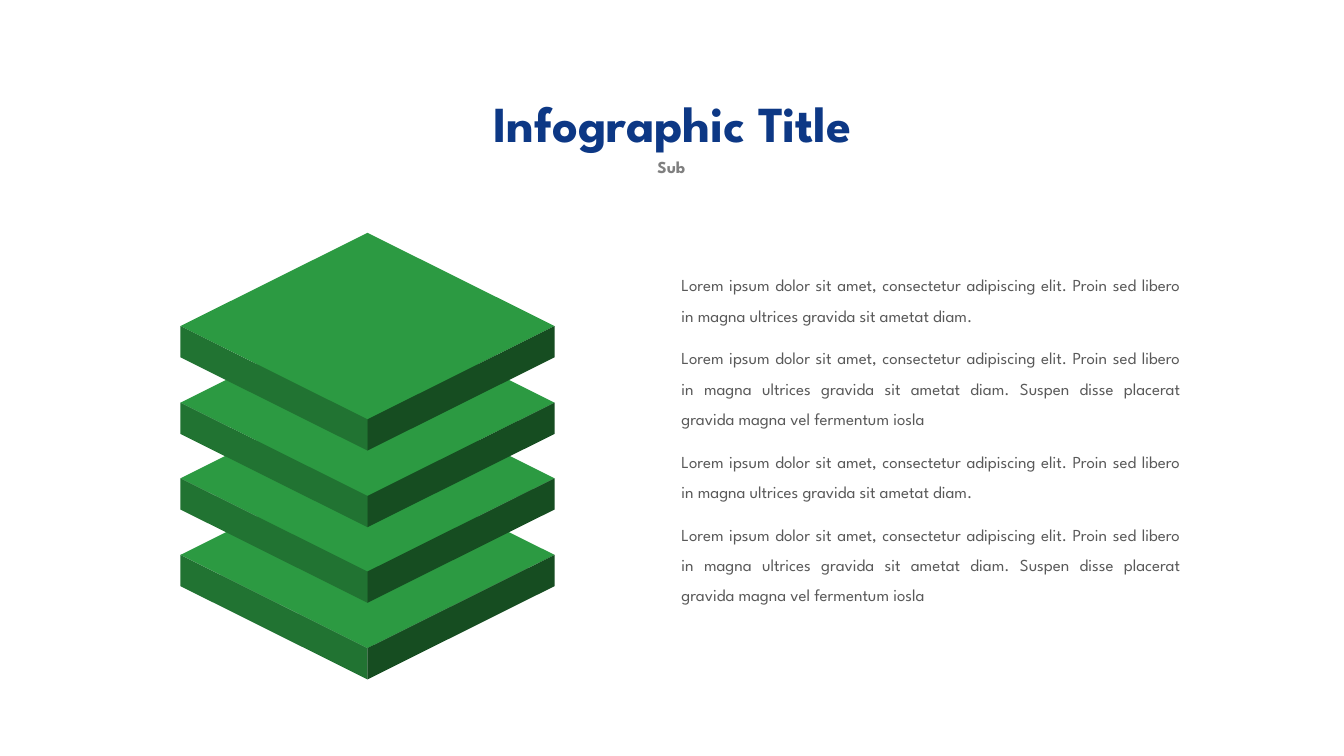
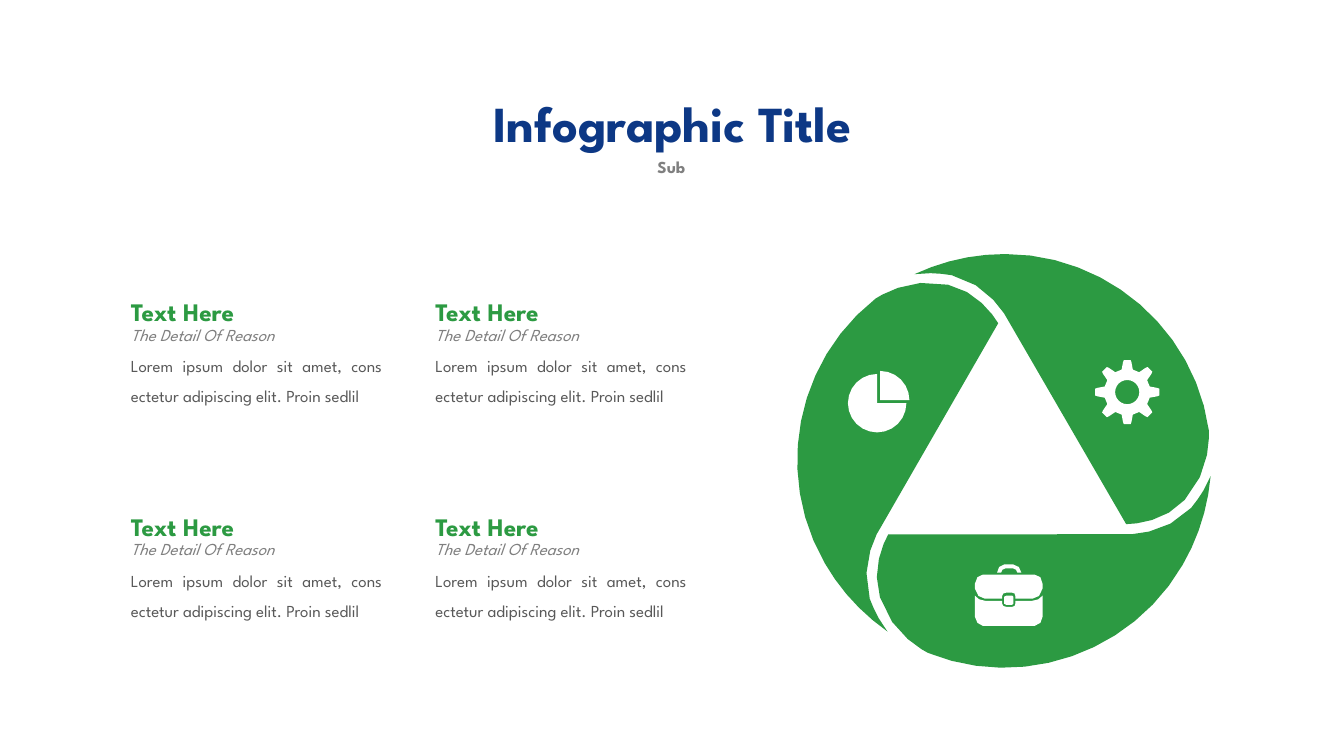
"""Build two infographic slides: a stack of slabs and a three-blade wheel."""
from dataclasses import dataclass
from math import ceil, cos, dist, radians, sin

from pptx import Presentation
from pptx.dml.color import RGBColor
from pptx.enum import text as tx
from pptx.util import Inches, Pt

FONT = "League Spartan"
NAVY, GREEN, LEFT_GREEN, RIGHT_GREEN = "0D3885", "2C9A42", "217332", "164D21"
GRAY, DARK_GRAY, WHITE = "7F7F7F", "595959", "FFFFFF"
LEFT, CENTER, JUSTIFY = tx.PP_ALIGN.LEFT, tx.PP_ALIGN.CENTER, tx.PP_ALIGN.JUSTIFY

Point = tuple[float, float]
Segment = tuple[Point, ...]

SHORT = ("Lorem ipsum dolor sit amet, consectetur adipiscing elit. "
         "Proin sed libero in magna ultrices gravida sit ametat diam. ")
LONG = SHORT + "Suspen disse placerat gravida magna vel fermentum iosla"
REASON = "Lorem ipsum dolor sit amet, cons ectetur adipiscing elit. Proin sedlil"


@dataclass(frozen=True)
class TextStyle:
    size: float
    color: str
    align: tx.PP_ALIGN = JUSTIFY
    bold: bool = False
    italic: bool = False
    spacing: float = 1.5
    after: float = 0


@dataclass(frozen=True)
class Outline:
    start: Point
    segments: list[Segment]


TITLE = TextStyle(36, NAVY, CENTER, bold=True, spacing=1)
SUBTITLE = TextStyle(12, GRAY, CENTER, bold=True)
HEADING = TextStyle(18, GREEN, bold=True)
DETAIL = TextStyle(12, GRAY, LEFT, italic=True)
BODY = TextStyle(12, DARK_GRAY)
LIST = TextStyle(12, DARK_GRAY, after=9)

HUB = (9.96, 4.57)
BLADE = Outline((2.03, -0.3), [
    ((1.89, -1.3), (1.02, -2.05), (0.01, -2.05)),
    ((-0.31, -2.05), (-0.61, -1.98), (-0.89, -1.85)),
    ((-0.84, -1.85), (-0.78, -1.86), (-0.73, -1.86)),
    ((-0.66, -1.86), (-0.59, -1.85), (-0.52, -1.84)),
    ((-0.16, -1.76), (0.03, -1.42), (0.04, -1.39)),
    ((1.21, 0.63),),
    ((1.31, 0.63), (1.6, 0.6), (1.79, 0.39)),
    ((2.06, 0.1), (2.03, -0.28), (2.03, -0.3)),
])
HANDLE = Outline((10.13, 5.68), [
    ((10.09, 5.68),),
    ((10.09, 5.66), (10.07, 5.64), (10.05, 5.64)),
    ((9.97, 5.64),),
    ((9.95, 5.64), (9.93, 5.66), (9.93, 5.68)),
    ((9.89, 5.68),),
    ((9.89, 5.64), (9.92, 5.6), (9.96, 5.6)),
    ((10.05, 5.6),),
    ((10.09, 5.6), (10.13, 5.64), (10.13, 5.68)),
])
LID = Outline((9.77, 5.94), [
    ((9.94, 5.94),), ((9.94, 5.91),),
    ((9.94, 5.89), (9.96, 5.88), (9.98, 5.88)),
    ((10.04, 5.88),),
    ((10.06, 5.88), (10.07, 5.89), (10.07, 5.91)),
    ((10.07, 5.94),), ((10.24, 5.94),),
    ((10.29, 5.94), (10.33, 5.9), (10.34, 5.84)),
    ((10.34, 5.79),),
    ((10.34, 5.74), (10.31, 5.7), (10.26, 5.7)),
    ((9.75, 5.7),),
    ((9.71, 5.7), (9.67, 5.74), (9.67, 5.79)),
    ((9.67, 5.84),),
    ((9.68, 5.9), (9.72, 5.94), (9.77, 5.94)),
])
CASE = Outline((10.24, 5.96), [
    ((10.07, 5.96),), ((10.07, 5.99),),
    ((10.07, 6.01), (10.06, 6.02), (10.04, 6.02)),
    ((9.98, 6.02),),
    ((9.96, 6.02), (9.94, 6.01), (9.94, 5.99)),
    ((9.94, 5.96),), ((9.77, 5.96),),
    ((9.73, 5.96), (9.69, 5.94), (9.67, 5.91)),
    ((9.67, 6.12),),
    ((9.67, 6.16), (9.71, 6.21), (9.75, 6.21)),
    ((10.26, 6.21),),
    ((10.31, 6.21), (10.34, 6.16), (10.34, 6.12)),
    ((10.34, 5.91),),
    ((10.32, 5.94), (10.28, 5.96), (10.24, 5.96)),
])
CLASP = Outline((10.04, 5.91), [
    ((9.98, 5.91),), ((9.96, 5.92),), ((9.96, 5.99),), ((9.98, 6),),
    ((10.04, 6),), ((10.05, 5.99),), ((10.05, 5.92),),
])


def rgb(value: str) -> RGBColor:
    """Turn a hex string into a colour."""
    return RGBColor.from_string(value)


def add_text(slide, left: float, top: float, width: float, height: float,
             lines: list[str], style: TextStyle) -> None:
    """Add a text box with one paragraph per line."""
    frame = slide.shapes.add_textbox(
        Inches(left), Inches(top), Inches(width), Inches(height)).text_frame
    frame.word_wrap = True
    frame.auto_size = tx.MSO_AUTO_SIZE.SHAPE_TO_FIT_TEXT
    frame.text = "\n".join(lines)
    for paragraph in frame.paragraphs:
        paragraph.alignment = style.align
        paragraph.line_spacing = style.spacing
        paragraph.space_after = Pt(style.after)
        font = paragraph.font
        font.name, font.size = FONT, Pt(style.size)
        font.bold, font.italic = style.bold, style.italic
        font.color.rgb = rgb(style.color)


def add_outline(slide, contours: list[list[Point]], fill: str) -> None:
    """Draw closed contours as one filled freeform."""
    first, *others = [[(Inches(x), Inches(y)) for x, y in contour] for contour in contours]
    builder = slide.shapes.build_freeform(*first[0], scale=1)
    builder.add_line_segments(first[1:])
    for contour in others:
        builder.move_to(*contour[0])
        builder.add_line_segments(contour[1:])
    shape = builder.convert_to_shape()
    shape.shadow.inherit = False
    shape.fill.solid()
    shape.fill.fore_color.rgb = rgb(fill)
    shape.line.fill.background()


def trace(outline: Outline) -> list[Point]:
    """Turn straight and cubic segments into points."""
    points = [outline.start]
    for segment in outline.segments:
        origin, end = points[-1], segment[-1]
        if len(segment) == 3:
            steps = ceil(dist(origin, end) * 4) + 1
            knots = (origin, *segment)
            for step in range(1, steps):
                t = step / steps
                s = 1 - t
                weights = (s ** 3, 3 * s * s * t, 3 * s * t * t, t ** 3)
                points.append((sum(w * x for w, (x, _) in zip(weights, knots)),
                               sum(w * y for w, (_, y) in zip(weights, knots))))
        points.append(end)
    return points


def polar(center: Point, radius: float, angle: float) -> Point:
    """Find a point at an angle in degrees, clockwise from the right."""
    return (center[0] + radius * cos(radians(angle)),
            center[1] + radius * sin(radians(angle)))


def arc(center: Point, radius: float, start: int, end: int) -> list[Point]:
    """Sample a circular arc every fifteen degrees."""
    return [polar(center, radius, angle) for angle in range(start, end + 1, 15)]


def turn(point: Point, angle: float) -> Point:
    """Rotate an offset around the hub and place it on the slide."""
    c, s = cos(radians(angle)), sin(radians(angle))
    return HUB[0] + point[0] * c - point[1] * s, HUB[1] + point[0] * s + point[1] * c


def add_slab(slide, top: float) -> None:
    """Draw one slab: its top face and two sides."""
    left, right, height, depth = 1.79, 5.5, 1.85, 0.31
    middle, waist, front = (left + right) / 2, top + height / 2, top + height
    add_outline(slide, [[(middle, top), (left, waist), (middle, front), (right, waist)]], GREEN)
    for corner, color in ((left, LEFT_GREEN), (right, RIGHT_GREEN)):
        add_outline(slide, [[(corner, waist), (corner, waist + depth),
                             (middle, front + depth), (middle, front)]], color)


def add_pie_icon(slide) -> None:
    """Draw the pie with its loose quarter."""
    slices = (((8.7, 4), 0, 270), ((8.73, 3.97), 270, 360))
    add_outline(slide, [[center, *arc(center, 0.29, start, end)]
                        for center, start, end in slices], WHITE)


def add_gear_icon(slide) -> None:
    """Draw the gear with eight teeth and a hole."""
    center = (11.18, 3.89)
    profile = ((-14, 0.23), (-8, 0.3), (-6, 0.32), (6, 0.32), (8, 0.3), (14, 0.23))
    teeth = [polar(center, radius, tooth * 45 + offset)
             for tooth in range(8) for offset, radius in profile]
    add_outline(slide, [teeth, arc(center, 0.12, 0, 345)], WHITE)


def new_slide(deck):
    """Add a blank slide with the shared title and subtitle."""
    slide = deck.slides.add_slide(deck.slide_layouts[6])
    add_text(slide, 3.65, 0.86, 6.04, 0.71, ["Infographic Title"], TITLE)
    add_text(slide, 4.91, 1.41, 3.5, 0.37, ["Sub"], SUBTITLE)
    return slide


def build_stack(deck) -> None:
    """Build the slide with four stacked slabs."""
    slide = new_slide(deck)
    add_text(slide, 6.66, 2.58, 5.15, 3.48, [SHORT, LONG] * 2, LIST)
    for top in (4.58, 3.82, 3.07, 2.31):
        add_slab(slide, top)


def build_wheel(deck) -> None:
    """Build the slide with four reasons and the wheel."""
    slide = new_slide(deck)
    blade = trace(BLADE)
    for angle in (0, 240, 120):
        add_outline(slide, [[turn(point, angle) for point in blade]], GREEN)
    add_outline(slide, [trace(part) for part in (HANDLE, LID, CASE, CLASP)], WHITE)
    add_pie_icon(slide)
    add_gear_icon(slide)
    for left, top in ((1.2, 2.74), (4.22, 2.74), (1.2, 4.87), (4.22, 4.87)):
        add_text(slide, left, top + 0.64, 2.69, 0.98, [REASON], BODY)
        add_text(slide, left, top, 2.34, 0.5, ["Text Here"], HEADING)
        add_text(slide, left, top + 0.33, 2.34, 0.37, ["The Detail Of Reason"], DETAIL)


def main() -> None:
    """Build and save the deck."""
    deck = Presentation()
    deck.slide_width, deck.slide_height = Inches(13.33), Inches(7.5)
    build_stack(deck)
    build_wheel(deck)
    deck.save("out.pptx")


if __name__ == "__main__":
    main()
